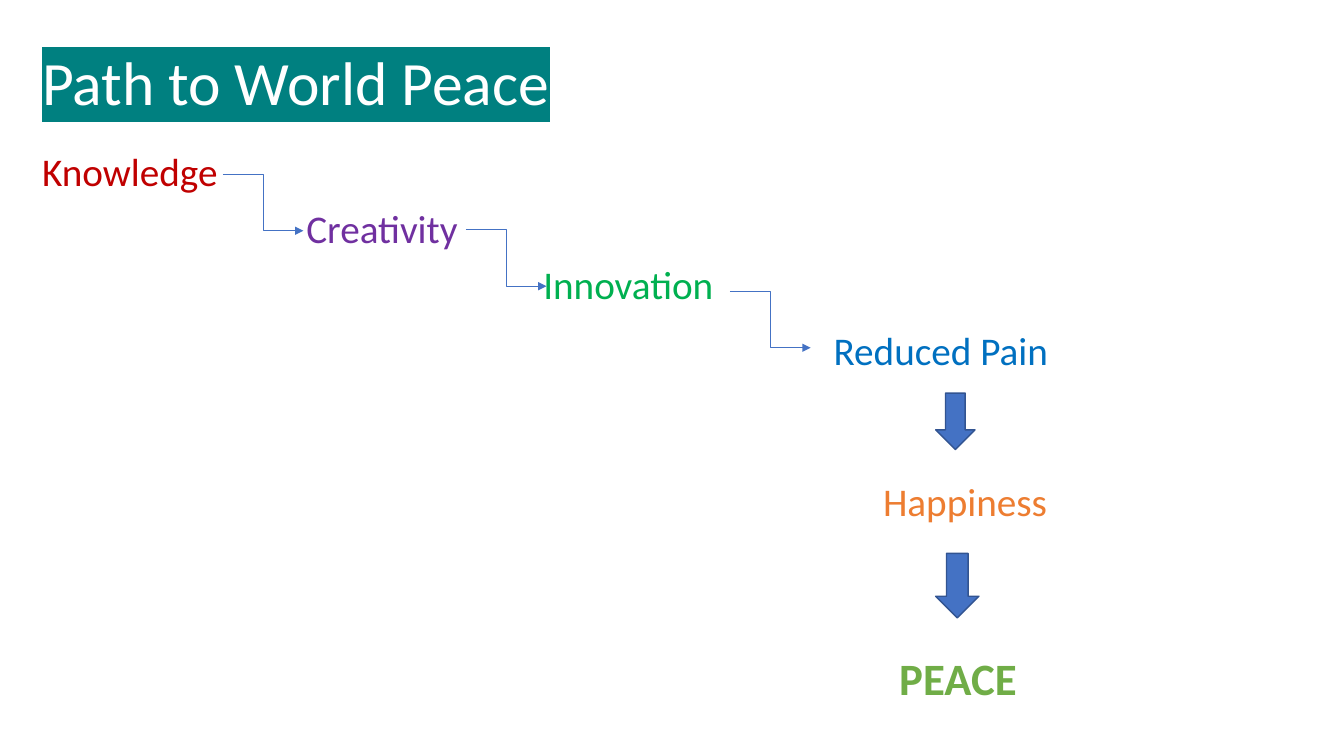
from dataclasses import dataclass

from lxml import etree
from pptx import Presentation
from pptx import util as u
from pptx.dml.color import RGBColor
from pptx.enum import shapes, text
from pptx.oxml import ns


@dataclass(frozen=True)
class Theme:
    font: str = "Calibri"
    title_size: int = 44
    step_size: int = 28
    goal_size: int = 32
    white: str = "FFFFFF"
    teal: str = "008080"
    red: str = "C00000"
    purple: str = "7030A0"
    green: str = "00B050"
    blue: str = "0070C0"
    orange: str = "ED7D31"
    lime: str = "70AD47"
    arrow: str = "4472C4"
    arrow_edge: str = "325491"


THEME = Theme()


def add_xml(parent, tag, **attributes):
    return etree.SubElement(parent, ns.qn(tag), attributes)


def add_text_box(page, box, wrap=True):
    frame = page.shapes.add_textbox(*map(u.Inches, box)).text_frame
    frame.word_wrap = wrap
    return frame


def write(para, words, size, color, bold=False):
    para.text = words
    span = para.runs[0]
    span.font.name = THEME.font
    span.font.size = u.Pt(size)
    span.font.bold = bold
    span.font.color.rgb = RGBColor.from_string(color)
    return span


def add_title(page, box):
    frame = add_text_box(page, box)
    frame.vertical_anchor = text.MSO_ANCHOR.MIDDLE
    para = frame.paragraphs[0]
    para.line_spacing = 0.9
    span = write(para, "Path to World Peace", THEME.title_size, THEME.white)
    fill = span.font._element.find(ns.qn("a:solidFill"))
    highlight = etree.Element(ns.qn("a:highlight"))
    add_xml(highlight, "a:srgbClr", val=THEME.teal)
    fill.addnext(highlight)


def add_elbow(page, left, top, width=0.8, height=0.56):
    ends = map(u.Inches, (left, top, left + width, top + height))
    elbow = page.shapes.add_connector(shapes.MSO_CONNECTOR.ELBOW, *ends)
    elbow.line.color.rgb = RGBColor.from_string(THEME.arrow)
    elbow.line.width = u.Pt(0.5)
    properties = elbow._element.spPr
    add_xml(properties.find(ns.qn("a:ln")), "a:tailEnd", type="triangle")
    add_xml(properties, "a:effectLst")


def add_staircase(page, box):
    left, top = box[:2]
    frame = add_text_box(page, box)
    steps = [
        ("Knowledge", THEME.red, 0),
        ("Creativity", THEME.purple, 2.62),
        ("Innovation", THEME.green, 4.97),
    ]
    for index, (words, color, indent) in enumerate(steps):
        para = frame.add_paragraph() if index else frame.paragraphs[0]
        para.line_spacing = 0.9
        para.space_before = u.Pt(10)
        write(para, words, THEME.step_size, color)
        para._p.get_or_add_pPr().set("marL", str(u.Inches(indent)))
    for across, down in [(1.89, 0.26), (4.3, 0.81), (6.92, 1.42)]:
        add_elbow(page, left + across, top + down)


def add_down_arrow(page, box):
    arrow = page.shapes.add_shape(shapes.MSO_SHAPE.DOWN_ARROW, *map(u.Inches, box))
    arrow.shadow.inherit = False
    arrow.fill.solid()
    arrow.fill.fore_color.rgb = RGBColor.from_string(THEME.arrow)
    arrow.line.color.rgb = RGBColor.from_string(THEME.arrow_edge)
    arrow.line.width = u.Pt(1)


def add_descent(page, box):
    left, top, width, height = box
    reduced = add_text_box(page, (left, top, 2.58, 0.57))
    write(reduced.paragraphs[0], "Reduced Pain", THEME.step_size, THEME.blue)
    happiness = add_text_box(page, (left + 0.49, top + 1.5, 2.28, 0.57))
    write(happiness.paragraphs[0], "Happiness", THEME.step_size, THEME.orange)
    peace = add_text_box(page, (left + 0.65, top + height - 0.64, 1.38, 0.64), False)
    write(peace.paragraphs[0], "PEACE", THEME.goal_size, THEME.lime, True)
    add_down_arrow(page, (left + 1.11, top + 0.71, 0.39, 0.56))
    add_down_arrow(page, (left + 1.11, top + 2.3, 0.43, 0.64))


def main():
    deck = Presentation()
    deck.slide_width, deck.slide_height = u.Inches(13.33), u.Inches(7.5)
    page = deck.slides.add_slide(deck.slide_layouts[6])
    add_title(page, (0.32, 0.32, 11.5, 1.05))
    add_staircase(page, (0.32, 1.47, 12.69, 5.87))
    add_descent(page, (8.17, 3.19, 2.77, 3.86))
    deck.save("out.pptx")


if __name__ == "__main__":
    main()
